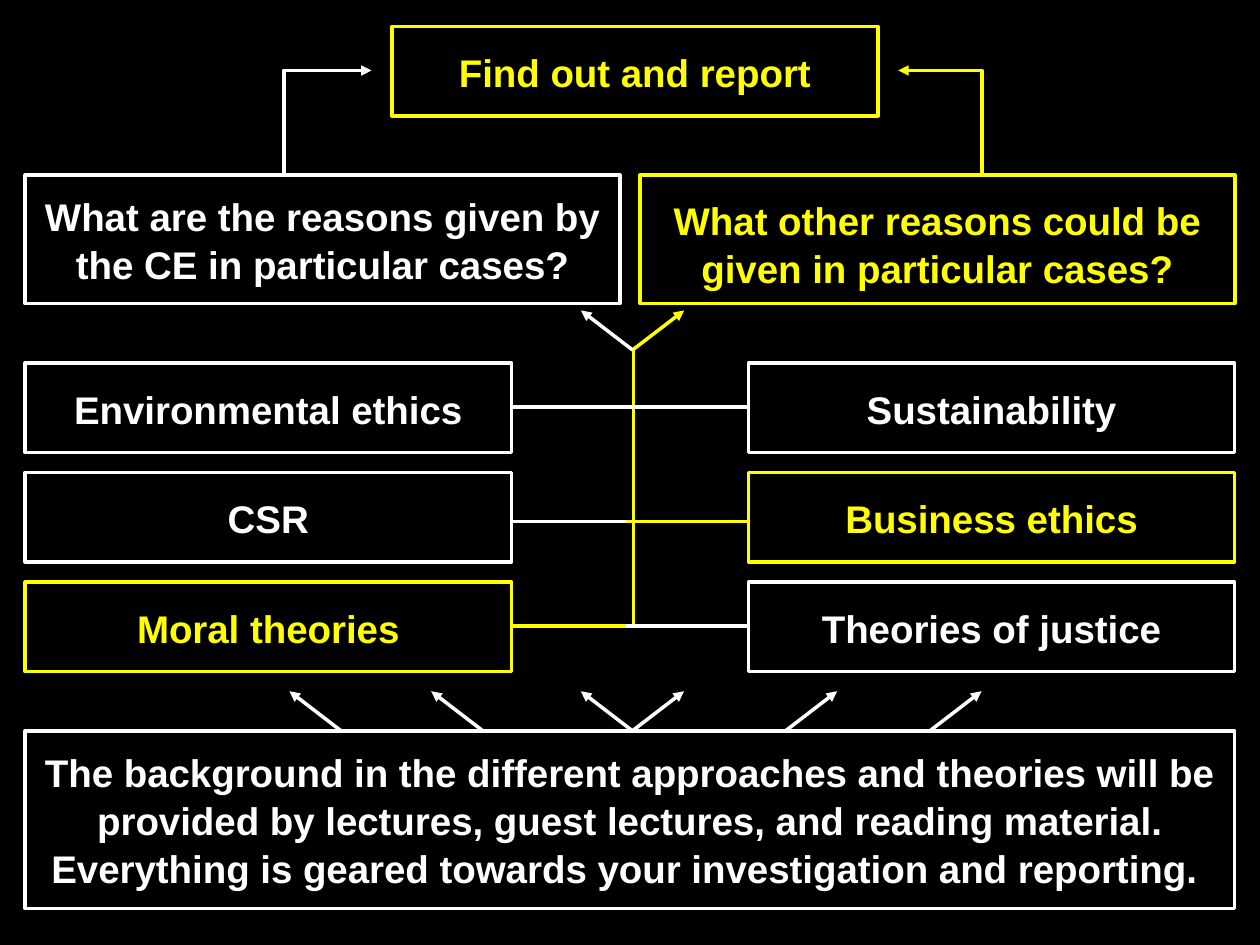
import pptx
import pptx.util
import pptx.dml.color
import pptx.enum.shapes
import pptx.enum.text
import pptx.oxml.ns
import lxml.etree

Pt = pptx.util.Pt
WHITE, YELLOW, BLACK = "FFFFFF", "FFFF00", "000000"
LEFT, RIGHT = 14.4, 705.6      # outer edges shared by all rows
TOPIC_W, TOPIC_H = 277.9, 51.1


def rgb(value):
    return pptx.dml.color.RGBColor.from_string(value)


def sub(parent, tag, **attrs):
    return lxml.etree.SubElement(parent, pptx.oxml.ns.qn(tag), attrs)


def format_box(sp, box, color, lines, top_inset=3.6):
    """Outline a shape, place it and fill it with centred paragraphs."""
    sp.left, sp.top, sp.width, sp.height = (Pt(v) for v in box)
    sp.fill.background()
    sp.line.color.rgb = rgb(color)
    sp.line.width = Pt(2)
    tf = sp.text_frame
    tf.word_wrap = True
    tf.auto_size = pptx.enum.text.MSO_AUTO_SIZE.NONE
    tf.vertical_anchor = pptx.enum.text.MSO_ANCHOR.MIDDLE
    tf.margin_top = Pt(top_inset)
    for i, line in enumerate(lines):
        p = tf.add_paragraph() if i else tf.paragraphs[0]
        p.alignment = pptx.enum.text.PP_ALIGN.CENTER
        p.line_spacing = 1.04
        p.space_before = Pt(0)
        r = p.add_run()
        r.text = line
        r.font.name = "Arial"
        r.font.size = Pt(22)
        r.font.bold = True
        r.font.color.rgb = rgb(color)


def add_box(s, box, color, *lines, top_inset=3.6):
    sp = s.shapes.add_shape(pptx.enum.shapes.MSO_SHAPE.RECTANGLE, *(Pt(v) for v in box))
    sp.shadow.inherit = False
    format_box(sp, box, color, lines, top_inset)


def add_line(s, start, end, color, width=2, arrow=False, bend=None):
    """Draw a straight line, or an elbow that turns at the fraction bend."""
    kinds = pptx.enum.shapes.MSO_CONNECTOR
    kind = kinds.STRAIGHT if bend is None else kinds.ELBOW
    line = s.shapes.add_connector(kind, *(Pt(v) for v in (*start, *end)))
    line.line.color.rgb = rgb(color)
    line.line.width = Pt(width)
    sppr = line._element.spPr
    if arrow:
        sub(line.line._get_or_add_ln(), "a:tailEnd", type="triangle")
    if bend is not None:
        guides = sppr.find(".//" + pptx.oxml.ns.qn("a:avLst"))
        sub(guides, "a:gd", name="adj1", fmla=f"val {round(bend * 100000)}")
    sub(sppr, "a:effectLst")


def add_arrow(s, x, y, side, color):
    """Slanted arrow rising to the left (side -1) or right (side 1)."""
    add_line(s, (x, y), (x + side * 29.5, y - 22.6), color, arrow=True)


def add_report(s, box):
    """Title box with an elbow arrow at each side."""
    x, y, w, h = box
    format_box(s.shapes.title, box, YELLOW, ["Find out and report"])
    add_line(s, (x + w + 107.3, y + 85), (x + w + 11.5, y + 25.2), YELLOW, arrow=True, bend=0.5)
    add_line(s, (x + 85, y + 85), (x - 11.5, y + 25.2), WHITE, arrow=True, bend=1.52)


def add_questions(s, box):
    """Two question boxes of equal width."""
    x, y, w, h = box
    part = (w - 11.4) / 2
    add_box(s, (x, y, part, h), WHITE,
            "What are the reasons given by the CE in particular cases?")
    add_box(s, (x + w - part, y, part, h), YELLOW,
            "What other reasons could be given in particular cases?", top_inset=8.2)


def add_topics(s, box):
    """Three rows of topics, linked to a central stem."""
    x, y, w, h = box
    mid = x + w / 2 + 2
    right = x + w - TOPIC_W
    pitch = (h - TOPIC_H) / 2
    rows = [
        (25.2, ("Environmental ethics", WHITE), ("Sustainability", WHITE)),
        (90.7, ("CSR", WHITE), ("Business ethics", YELLOW)),
        (150.4, ("Moral theories", YELLOW), ("Theories of justice", WHITE)),
    ]
    add_line(s, (mid, y - 7.7), (mid, y + rows[-1][0]), YELLOW, 2.25)
    for i, (link, (name_l, color_l), (name_r, color_r)) in enumerate(rows):
        top = y + i * pitch
        add_box(s, (x, top, TOPIC_W, TOPIC_H), color_l, name_l)
        add_box(s, (right, top, TOPIC_W, TOPIC_H), color_r, name_r)
        add_line(s, (mid, y + link), (x + TOPIC_W, y + link), color_l)
        add_line(s, (right, y + link), (mid - 4.5, y + link), color_r)
    add_arrow(s, mid - 0.5, y - 7.4, 1, YELLOW)
    add_arrow(s, mid - 0.5, y - 7.4, -1, WHITE)


def add_background(s, box):
    """Bottom box with arrows rising from its top edge."""
    x, y, w, h = box
    add_box(s, box, WHITE,
            "The background in the different approaches and theories will be "
            "provided by lectures, guest lectures, and reading material.",
            "Everything is geared towards your investigation and reporting. ")
    for side, starts in ((-1, (180.5, 261.5, 347)), (1, (347, 434.5, 517))):
        for dx in starts:
            add_arrow(s, x + dx, y, side, WHITE)


def main():
    prs = pptx.Presentation()
    prs.slide_width, prs.slide_height = Pt(720), Pt(540)
    s = prs.slides.add_slide(prs.slide_layouts[5])
    s.background.fill.solid()
    s.background.fill.fore_color.rgb = rgb(BLACK)
    width = RIGHT - LEFT
    add_report(s, (223.9, 15.1, TOPIC_W, TOPIC_H))
    add_questions(s, (LEFT, 100.1, width, 73.4))
    add_topics(s, (LEFT, 207.4, width, 176.4))
    add_background(s, (LEFT, 417.6, width, 101.5))
    prs.save("out.pptx")


if __name__ == "__main__":
    main()
